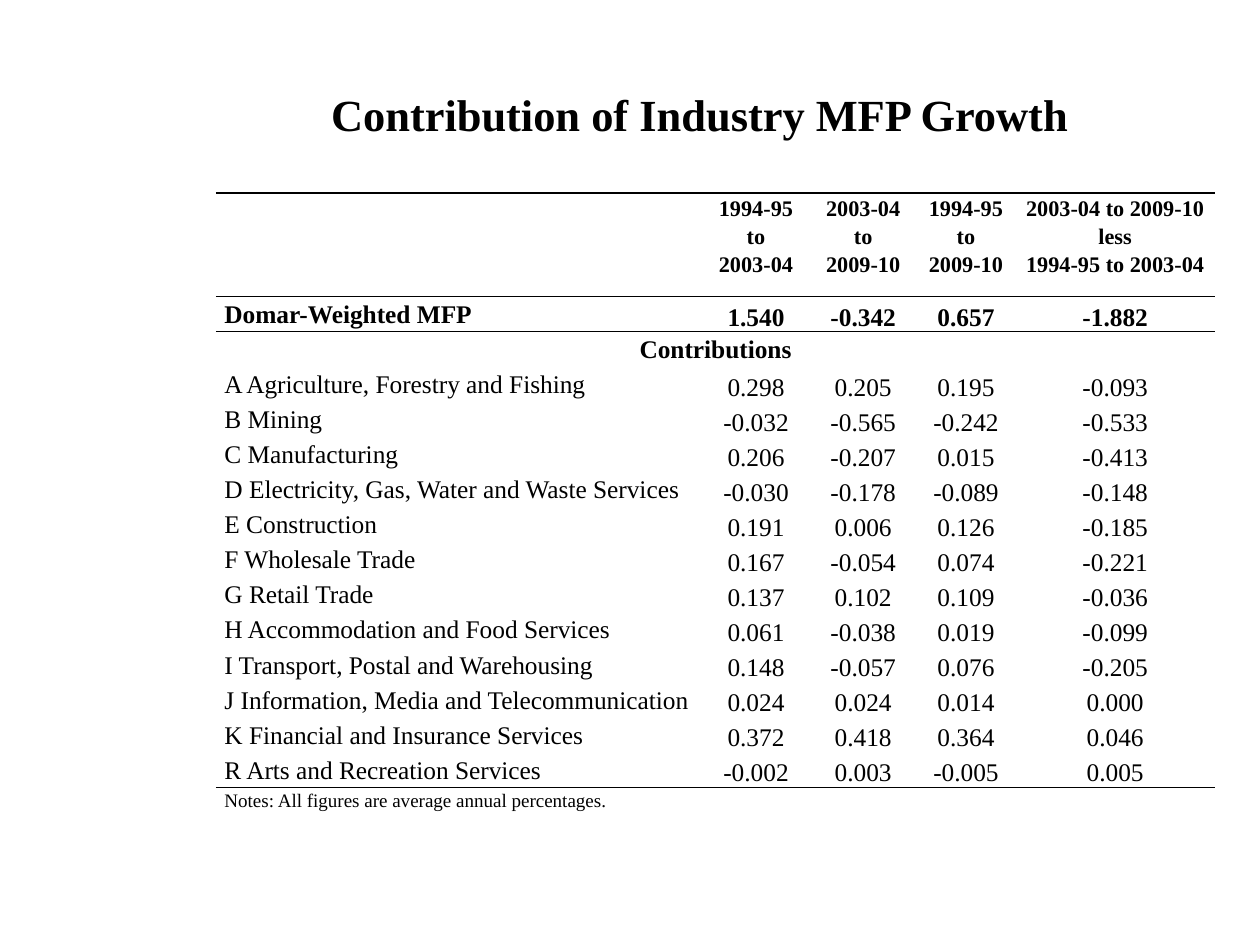
"""Build a slide with a table of industry contributions to MFP growth."""
from lxml import etree
from pptx import Presentation, util as u
from pptx.dml.color import RGBColor
from pptx.enum import text
from pptx.oxml import ns

TITLE = "Contribution of Industry MFP Growth"
PERIODS = ("", "1994-95\nto\n2003-04", "2003-04\nto\n2009-10", "1994-95\nto\n2009-10",
           "2003-04 to 2009-10\nless\n1994-95 to 2003-04")
TOTAL = ("Domar-Weighted MFP", "1.540", "-0.342", "0.657", "-1.882")
SUBHEADING = ("Contributions",)
INDUSTRIES = [
    ("A Agriculture, Forestry and Fishing", "0.298", "0.205", "0.195", "-0.093"),
    ("B Mining", "-0.032", "-0.565", "-0.242", "-0.533"),
    ("C Manufacturing", "0.206", "-0.207", "0.015", "-0.413"),
    ("D Electricity, Gas, Water and Waste Services", "-0.030", "-0.178", "-0.089", "-0.148"),
    ("E Construction", "0.191", "0.006", "0.126", "-0.185"),
    ("F Wholesale Trade", "0.167", "-0.054", "0.074", "-0.221"),
    ("G Retail Trade", "0.137", "0.102", "0.109", "-0.036"),
    ("H Accommodation and Food Services", "0.061", "-0.038", "0.019", "-0.099"),
    ("I Transport, Postal and Warehousing", "0.148", "-0.057", "0.076", "-0.205"),
    ("J Information, Media and Telecommunication", "0.024", "0.024", "0.014", "0.000"),
    ("K Financial and Insurance Services", "0.372", "0.418", "0.364", "0.046"),
    ("R Arts and Recreation Services", "-0.002", "0.003", "-0.005", "0.005"),
]
NOTES = ("Notes: All figures are average annual percentages.",)
ROWS = [PERIODS, TOTAL, SUBHEADING, *INDUSTRIES, NOTES]
LAST = len(ROWS) - 1

SLIDE_WIDTH, SLIDE_HEIGHT = 793.7, 595.28
COLUMN_WIDTHS = (306.5, 67.5, 67.5, 62, 126)
ROW_HEIGHTS = (65.2, *[22.03] * (LAST - 1), 21.5)
FONT = "Times New Roman"
BLACK = RGBColor(0, 0, 0)
PLAIN_STYLE = "{2D5ABB26-0587-4C30-8999-92F81FD0307C}"
RULES = {0: ("lnT", "lnB"), 1: ("lnT",), LAST - 1: ("lnB",), LAST: ("lnT",)}


def style(paragraph, size, bold, spacing, align):
    paragraph.alignment = align
    paragraph.line_spacing = spacing
    font = paragraph.font
    font.name, font.size, font.bold = FONT, u.Pt(size), bold
    font.color.rgb = BLACK


def rule(cell, side):
    line = etree.SubElement(cell._tc.get_or_add_tcPr(), ns.qn(f"a:{side}"), w=str(u.Pt(1)))
    fill = etree.SubElement(line, ns.qn("a:solidFill"))
    etree.SubElement(fill, ns.qn("a:srgbClr"), val=str(BLACK))


def fill_cell(cell, row, column):
    for side in RULES.get(row, ()):
        rule(cell, side)
    cell.fill.background()
    cell.margin_left = cell.margin_right = u.Pt(5.4)
    cell.margin_top = cell.margin_bottom = 0
    figure = column > 0 and row > 0
    cell.vertical_anchor = text.MSO_ANCHOR.BOTTOM if figure else text.MSO_ANCHOR.TOP
    if column < len(ROWS[row]):
        cell.text_frame.text = ROWS[row][column]
    size = {0: 14, LAST: 12}.get(row, 16)
    centred = column > 0 or ROWS[row] == SUBHEADING
    for paragraph in cell.text_frame.paragraphs:
        style(paragraph, size, row < 3, 1.15,
              text.PP_ALIGN.CENTER if centred else text.PP_ALIGN.LEFT)


def main():
    deck = Presentation()
    deck.slide_width, deck.slide_height = u.Pt(SLIDE_WIDTH), u.Pt(SLIDE_HEIGHT)
    slide = deck.slides.add_slide(deck.slide_layouts[6])

    title = slide.shapes.add_textbox(u.Pt(127.4), u.Pt(23.6), u.Pt(626.4), u.Pt(99.4)).text_frame
    title.word_wrap = True
    title.vertical_anchor = text.MSO_ANCHOR.MIDDLE
    title.margin_left = title.margin_right = title.margin_top = title.margin_bottom = 0
    title.text = TITLE
    style(title.paragraphs[0], 28, True, 0.96, text.PP_ALIGN.CENTER)

    table = slide.shapes.add_table(len(ROWS), len(COLUMN_WIDTHS), u.Pt(136), u.Pt(121.6),
                                   u.Pt(sum(COLUMN_WIDTHS)), u.Pt(sum(ROW_HEIGHTS))).table
    table.first_row = table.horz_banding = False
    table._tbl.tblPr.find(ns.qn("a:tableStyleId")).text = PLAIN_STYLE
    for column, width in zip(table.columns, COLUMN_WIDTHS):
        column.width = u.Pt(width)
    for row, height in zip(table.rows, ROW_HEIGHTS):
        row.height = u.Pt(height)
    for row, content in enumerate(ROWS):
        for column in range(len(COLUMN_WIDTHS)):
            fill_cell(table.cell(row, column), row, column)
        if len(content) == 1:
            table.cell(row, 0).merge(table.cell(row, len(COLUMN_WIDTHS) - 1))

    deck.save("out.pptx")


if __name__ == "__main__":
    main()
